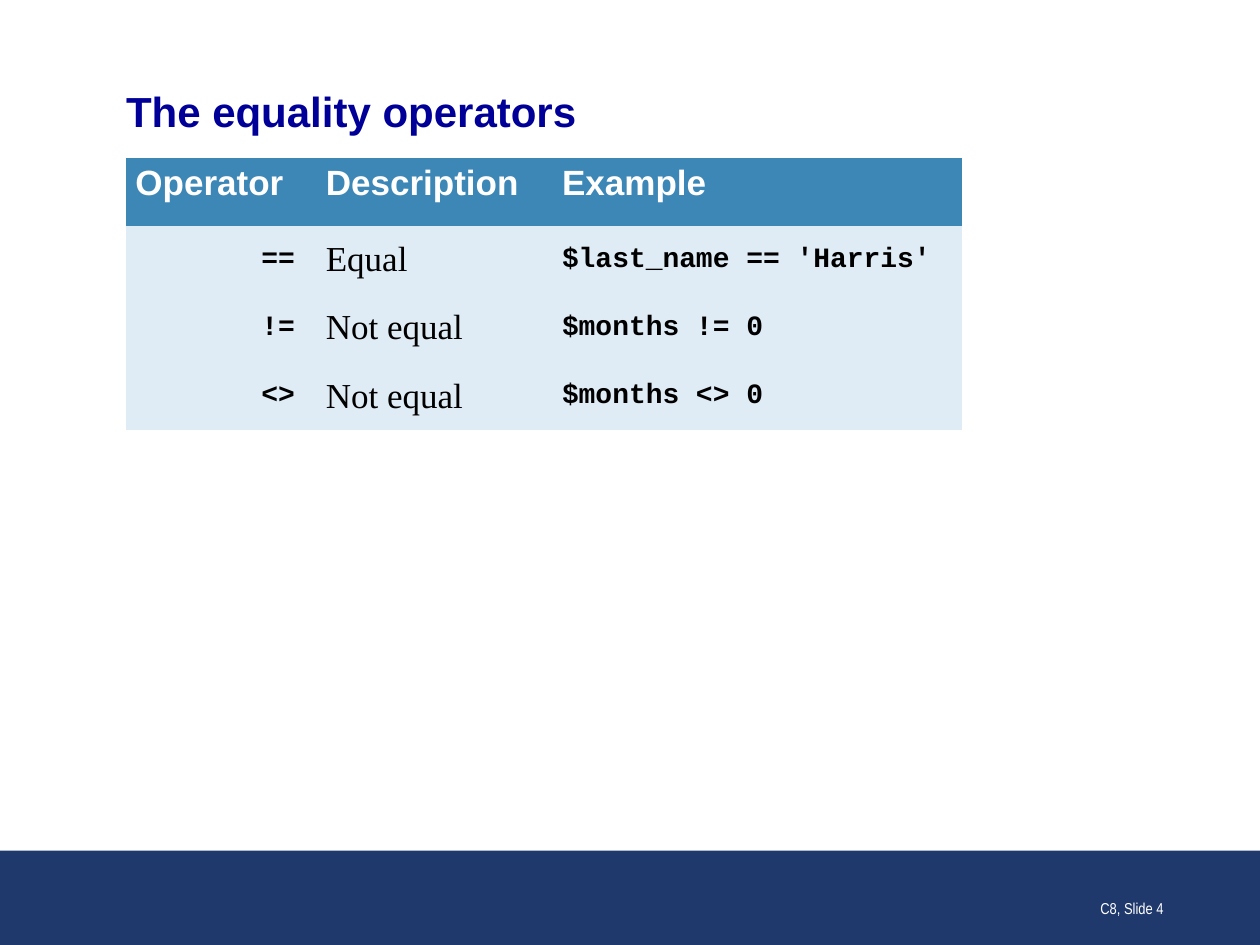
from pptx import Presentation
from pptx.dml.color import RGBColor
from pptx.enum import shapes, text
from pptx.util import Pt

COLORS = {
    "title": "000099",
    "header": "3D87B7",
    "body": "DFECF5",
    "band": "20396D",
    "ink": "000000",
    "white": "FFFFFF",
}
NO_GRID_STYLE = "{2D5ABB26-0587-4C30-8999-92F81FD0307C}"
WIDTH, HEIGHT = 720, 540
MARGIN = 72


class SlideBuilder:
    """Holds the slide and the style of its elements."""

    def __init__(self, slide):
        self.slide = slide

    def color(self, name):
        return RGBColor.from_string(COLORS[name])

    def paragraph(self, frame, words, font, size, color, bold=False,
                  align=text.PP_ALIGN.LEFT):
        line = frame.paragraphs[0]
        line.text = words
        line.alignment = align
        line.font.name = font
        line.font.size = Pt(size)
        line.font.bold = bold
        line.font.color.rgb = self.color(color)

    def set_margins(self, frame, side, end):
        frame.margin_left = frame.margin_right = Pt(side)
        frame.margin_top = frame.margin_bottom = Pt(end)

    def title(self, words, left, top, width, height):
        heading = self.slide.shapes.title
        heading.left, heading.top = Pt(left), Pt(top)
        heading.width, heading.height = Pt(width), Pt(height)
        frame = heading.text_frame
        self.set_margins(frame, 0, 0)
        frame.vertical_anchor = text.MSO_ANCHOR.MIDDLE
        frame.auto_size = text.MSO_AUTO_SIZE.NONE
        self.paragraph(frame, words, "Arial", 24, "title", bold=True)

    def band(self, left, top, width, height):
        bar = self.slide.shapes.add_shape(
            shapes.MSO_SHAPE.RECTANGLE, Pt(left), Pt(top), Pt(width), Pt(height))
        bar.shadow.inherit = False
        bar.fill.solid()
        bar.fill.fore_color.rgb = self.color("band")
        bar.line.fill.background()

    def footer(self, words, left, top, width, height):
        box = self.slide.shapes.add_textbox(
            Pt(left), Pt(top), Pt(width), Pt(height))
        frame = box.text_frame
        frame.word_wrap = True
        frame.vertical_anchor = text.MSO_ANCHOR.BOTTOM
        self.paragraph(frame, words, "Arial Narrow", 9, "white",
                       align=text.PP_ALIGN.RIGHT)

    def table(self, rows, left, top, widths, row_height, code_columns, indents):
        grid = self.slide.shapes.add_table(
            len(rows), len(widths), Pt(left), Pt(top),
            Pt(sum(widths)), Pt(row_height * len(rows))).table
        grid.horz_banding = False
        grid._tbl.tblPr[0].text = NO_GRID_STYLE
        for column, width in zip(grid.columns, widths):
            column.width = Pt(width)
        for r, row in enumerate(rows):
            grid.rows[r].height = Pt(row_height)
            for c, words in enumerate(row):
                cell = grid.cell(r, c)
                self.set_margins(cell, 5.4, 3.6)
                cell.fill.solid()
                cell.fill.fore_color.rgb = self.color("body" if r else "header")
                if r == 0:
                    look = ("Arial", 20, "white", True)
                else:
                    cell.vertical_anchor = text.MSO_ANCHOR.MIDDLE
                    cell.margin_left = Pt(5.4 + indents[c])
                    if c in code_columns:
                        look = ("Courier New", 16, "ink", True)
                    else:
                        look = ("Times New Roman", 20, "ink", False)
                self.paragraph(cell.text_frame, words, *look)


def main():
    deck = Presentation()
    deck.slide_width, deck.slide_height = Pt(WIDTH), Pt(HEIGHT)
    builder = SlideBuilder(deck.slides.add_slide(deck.slide_layouts[5]))

    # Bottom band
    builder.band(0, 486, WIDTH, 54)

    # Title
    builder.title("The equality operators", MARGIN, 49, WIDTH - 2 * MARGIN, 29)

    # Operators with their meaning and an example
    operators = [
        ("Operator", "Description", "Example"),
        ("==", "Equal", "$last_name == 'Harris'"),
        ("!=", "Not equal", "$months != 0"),
        ("<>", "Not equal", "$months <> 0"),
    ]
    builder.table(operators, MARGIN, 90, widths=(108.8, 135, 234),
                  row_height=39, code_columns=(0, 2), indents=(72, 0, 0))

    # Chapter and slide number
    builder.footer("C8, Slide 4", 522, 492, 150, 36)

    deck.save("out.pptx")


if __name__ == "__main__":
    main()
